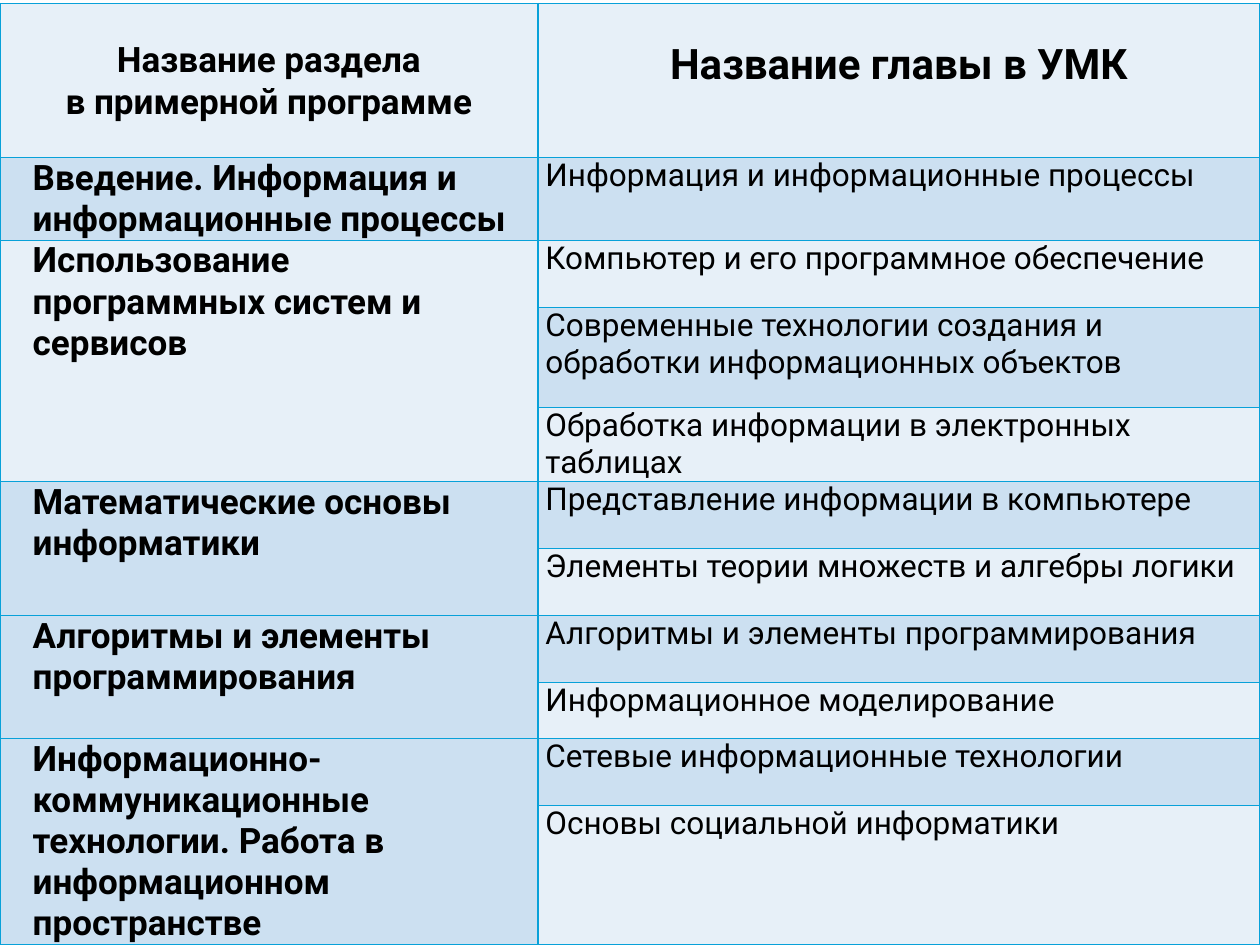
from dataclasses import dataclass

from lxml.etree import SubElement
from pptx import Presentation
from pptx.dml.color import RGBColor
from pptx.enum.text import MSO_ANCHOR, PP_ALIGN
from pptx.oxml.ns import qn
from pptx.util import Pt


@dataclass(frozen=True)
class Theme:
    font: str = "Roboto"
    text: str = "000000"
    light: str = "E7F0F8"
    dark: str = "CCE0F1"
    border: str = "08A1D9"
    section_size: int = 20
    chapter_size: int = 18
    heading_size: int = 24


THEME = Theme()

COLUMN_WIDTHS = [307.4, 412.6]
ROW_HEIGHTS = [88, 47.4, 38.3, 57.2, 42.3, 38.3, 38.3, 38.3, 32, 38.3, 79.4]
TABLE_TOP = 2
SIDE_MARGIN = 4.3
HEADER_MARGIN = 21.1
SECTION_INDENT = 14.4

HEADERS = ["Название раздела\vв примерной программе", "Название главы в УМК"]

# Each section with its chapters, one table row per chapter
SECTIONS = [
    ("Введение. Информация и информационные процессы",
     ["Информация и информационные процессы"]),
    ("Использование программных систем и сервисов",
     ["Компьютер и его программное обеспечение",
      "Современные технологии создания и обработки информационных объектов",
      "Обработка информации в электронных таблицах"]),
    ("Математические основы информатики",
     ["Представление информации в компьютере",
      "Элементы теории множеств и алгебры логики"]),
    ("Алгоритмы и элементы программирования",
     ["Алгоритмы и элементы программирования",
      "Информационное моделирование"]),
    ("Информационно-коммуникационные технологии. "
     "Работа в информационном пространстве",
     ["Сетевые информационные технологии",
      "Основы социальной информатики"]),
]

HEADER = {"bold": True}
SECTION = {"bold": True, "size": Pt(THEME.section_size)}
CHAPTER = {"bold": False, "size": Pt(THEME.chapter_size)}


def set_attributes(target, values):
    for name, value in values.items():
        setattr(target, name, value)


def add_borders(cell):
    tc_pr = cell._tc.get_or_add_tcPr()
    for position, side in enumerate(("lnL", "lnR", "lnT", "lnB")):
        line = SubElement(tc_pr, qn(f"a:{side}"), w=str(Pt(1)))
        fill = SubElement(line, qn("a:solidFill"))
        SubElement(fill, qn("a:srgbClr"), val=THEME.border)
        # Borders come before the fill in the cell properties
        tc_pr.insert(position, line)


def style_cell(cell, row):
    set_attributes(cell, {
        "margin_left": Pt(SIDE_MARGIN), "margin_right": Pt(SIDE_MARGIN),
        "margin_top": Pt(0), "margin_bottom": Pt(0),
        "vertical_anchor": MSO_ANCHOR.TOP,
    })
    cell.fill.solid()
    color = THEME.dark if row % 2 else THEME.light
    cell.fill.fore_color.rgb = RGBColor.from_string(color)
    add_borders(cell)


def write_cell(cell, text, font, align=PP_ALIGN.LEFT, indent=0):
    p = cell.text_frame.paragraphs[0]
    p.text = text
    p.alignment = align
    if indent:
        p._p.get_or_add_pPr().set("marL", str(Pt(indent)))
    for r in p.runs:
        set_attributes(r.font, {"name": THEME.font, **font})
        r.font.color.rgb = RGBColor.from_string(THEME.text)


def add_grid(slide):
    s = slide.shapes.add_table(
        len(ROW_HEIGHTS), len(COLUMN_WIDTHS), Pt(0), Pt(TABLE_TOP),
        Pt(sum(COLUMN_WIDTHS)), Pt(sum(ROW_HEIGHTS)))
    table = s.table
    set_attributes(table, {"first_row": False, "horz_banding": False})
    for column, width in zip(table.columns, COLUMN_WIDTHS):
        column.width = Pt(width)
    for index, height in enumerate(ROW_HEIGHTS):
        table.rows[index].height = Pt(height)
        for cell in table.rows[index].cells:
            style_cell(cell, index)
    return table


def fill_header(table):
    sizes = (THEME.section_size, THEME.heading_size)
    for column, (text, size) in enumerate(zip(HEADERS, sizes)):
        cell = table.cell(0, column)
        cell.margin_top = Pt(HEADER_MARGIN)
        write_cell(cell, text, {**HEADER, "size": Pt(size)}, PP_ALIGN.CENTER)


def fill_sections(table):
    row = 1
    for section, chapters in SECTIONS:
        first = table.cell(row, 0)
        if len(chapters) > 1:
            first.merge(table.cell(row + len(chapters) - 1, 0))
        write_cell(first, section, SECTION, indent=SECTION_INDENT)
        for chapter in chapters:
            write_cell(table.cell(row, 1), chapter, CHAPTER)
            row += 1


def main():
    prs = Presentation()
    set_attributes(prs, {"slide_width": Pt(720), "slide_height": Pt(540)})
    slide = prs.slides.add_slide(prs.slide_layouts[6])

    # Table of programme sections and textbook chapters
    table = add_grid(slide)
    fill_header(table)
    fill_sections(table)
    prs.save("out.pptx")


if __name__ == "__main__":
    main()
